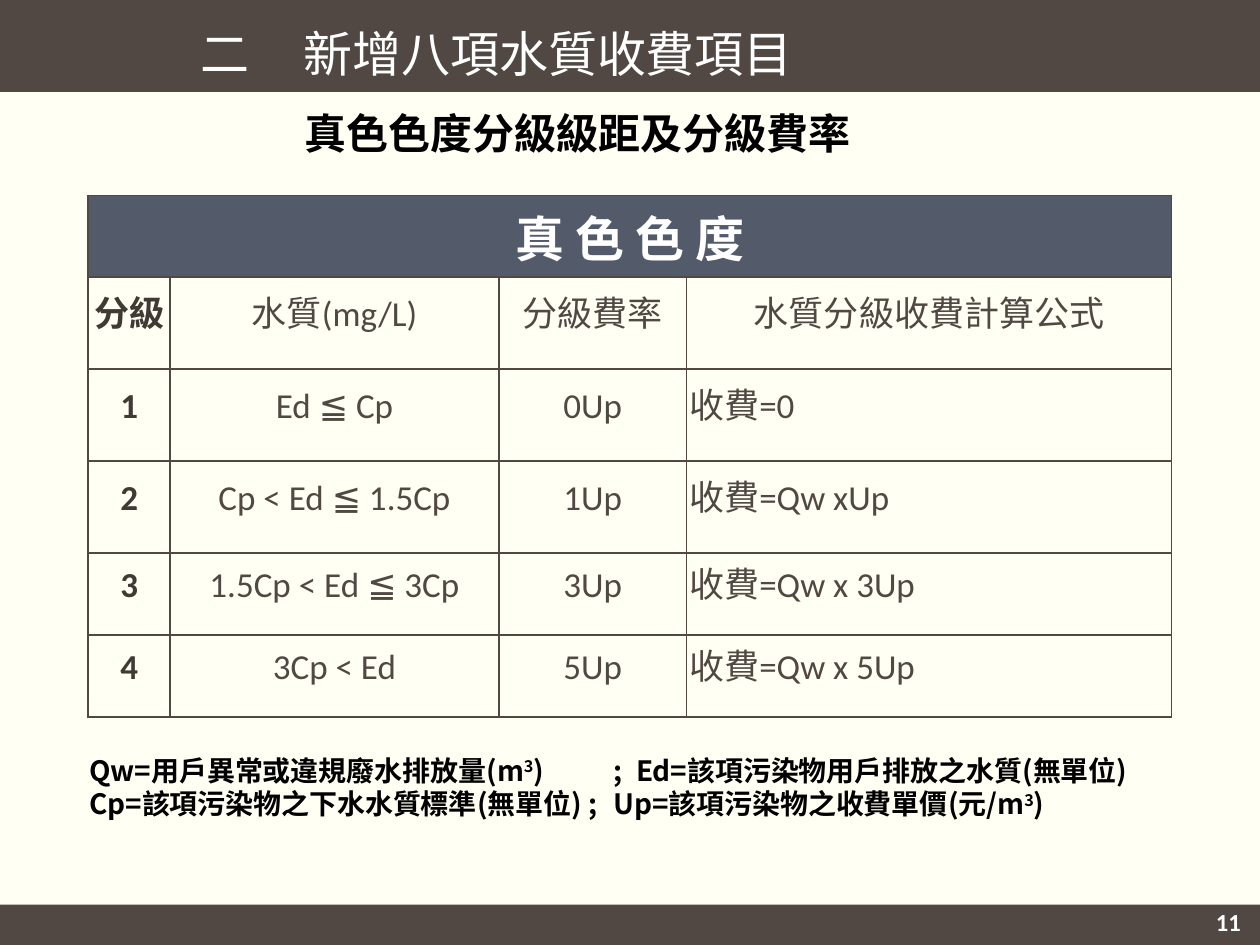
from dataclasses import dataclass

from lxml import etree
from pptx import Presentation
from pptx.dml.color import RGBColor
from pptx.enum.shapes import MSO_SHAPE
from pptx.enum.text import MSO_ANCHOR, MSO_AUTO_SIZE, PP_ALIGN
from pptx.oxml.ns import qn
from pptx.util import Pt

PX = 9144  # 100 px to the inch
RECTANGLE = MSO_SHAPE.RECTANGLE
MIDDLE = MSO_ANCHOR.MIDDLE
GROW = MSO_AUTO_SIZE.SHAPE_TO_FIT_TEXT
LEFT, CENTER = PP_ALIGN.LEFT, PP_ALIGN.CENTER

IVORY = RGBColor(0xFF, 0xFF, 0xF3)
BROWN = RGBColor(0x51, 0x48, 0x43)
DARK_BROWN = RGBColor(0x41, 0x39, 0x33)
SLATE = RGBColor(0x53, 0x5A, 0x69)
WHITE = RGBColor(0xFF, 0xFF, 0xFF)
BLACK = RGBColor(0, 0, 0)
JP, SC, CALIBRI = "Noto Sans CJK JP", "Noto Sans CJK SC", "Calibri"


@dataclass(frozen=True)
class TextStyle:
    size: int
    color: RGBColor
    latin: str
    east_asian: str
    bold: bool = False


@dataclass(frozen=True)
class Label:
    box: tuple[int, int, int, int]
    lines: tuple[str, ...]
    style: TextStyle
    tabs: tuple[int, ...] = ()
    align: PP_ALIGN = LEFT
    wrap: bool = True


TABLE_TITLE = TextStyle(28, WHITE, CALIBRI, SC, True)
GRADE = TextStyle(20, DARK_BROWN, CALIBRI, SC, True)
BODY = TextStyle(20, BROWN, CALIBRI, SC)

BARS = ((0, 0, 1000, 73), (0, 718, 1000, 32))
# A caret starts and ends a superscript.
LABELS = (
    Label((61, 593, 885, 64),
          ("Qw=用戶異常或違規廢水排放量(m^3^)\t;\tEd=該項污染物用戶排放之水質(無單位)",
           "Cp=該項污染物之下水水質標準(無單位) ;\tUp=該項污染物之收費單價(元/m^3^)"),
          TextStyle(16, BLACK, JP, JP, True), tabs=(416, 434)),
    Label((232, 80, 537, 51), ("真色色度分級級距及分級費率",),
          TextStyle(24, BLACK, JP, JP, True)),
    Label((955, 715, 40, 34), ("11",),
          TextStyle(14, WHITE, CALIBRI, SC, True), align=CENTER, wrap=False),
    Label((149, 14, 708, 57), ("二\t新增八項水質收費項目",),
          TextStyle(28, WHITE, SC, SC), tabs=(82,)),
)

TABLE_LEFT, TABLE_TOP = 70, 155
COLUMN_WIDTHS = (65, 261, 149, 385)
ROW_HEIGHTS = (65, 73, 73, 73, 65, 65)
RATE_TITLE = "真 色 色 度"
RATE_ROWS = (
    ("分級", "水質(mg/L)", "分級費率", "水質分級收費計算公式"),
    ("1", "Ed ≦ Cp", "0Up", "收費=0"),
    ("2", "Cp < Ed ≦ 1.5Cp", "1Up", "收費=Qw xUp"),
    ("3", "1.5Cp < Ed ≦ 3Cp", "3Up", "收費=Qw x 3Up"),
    ("4", "3Cp < Ed", "5Up", "收費=Qw x 5Up"),
)


def scaled(lengths) -> list[int]:
    return [length * PX for length in lengths]


def add_run(paragraph, text: str, style: TextStyle, superscript: bool = False) -> None:
    run = paragraph.add_run()
    run.text = text
    run.font.size = Pt(style.size)
    run.font.bold = style.bold
    run.font.color.rgb = style.color
    run.font.name = style.latin
    properties = run._r.get_or_add_rPr()
    etree.SubElement(properties, qn("a:ea"), typeface=style.east_asian)
    if superscript:
        properties.set("baseline", "30000")


def add_tabs(paragraph, stops: tuple[int, ...]) -> None:
    tab_list = etree.SubElement(paragraph._p.get_or_add_pPr(), qn("a:tabLst"))
    for stop in stops:
        etree.SubElement(tab_list, qn("a:tab"), pos=str(stop * PX), algn="l")


def add_bar(slide, box: tuple[int, int, int, int]) -> None:
    bar = slide.shapes.add_shape(RECTANGLE, *scaled(box))
    bar.shadow.inherit = False
    bar.fill.solid()
    bar.fill.fore_color.rgb = BROWN
    bar.line.fill.background()


def add_label(slide, label: Label) -> None:
    frame = slide.shapes.add_textbox(*scaled(label.box)).text_frame
    frame.word_wrap = label.wrap
    frame.auto_size = GROW
    for index, line in enumerate(label.lines):
        paragraph = frame.add_paragraph() if index else frame.paragraphs[0]
        if label.tabs:
            add_tabs(paragraph, label.tabs)
        paragraph.alignment = label.align
        for part, text in enumerate(line.split("^")):
            add_run(paragraph, text, label.style, superscript=part % 2 == 1)


def add_borders(cell) -> None:
    properties = cell._tc.get_or_add_tcPr()
    for index, side in enumerate(("a:lnL", "a:lnR", "a:lnT", "a:lnB")):
        border = etree.Element(qn(side), w=str(Pt(1)))
        fill = etree.SubElement(border, qn("a:solidFill"))
        etree.SubElement(fill, qn("a:srgbClr"), val=str(BROWN))
        properties.insert(index, border)


def format_cell(cell) -> None:
    cell.margin_left = cell.margin_right = 2 * PX
    cell.margin_top = cell.margin_bottom = 0
    cell.vertical_anchor = MIDDLE
    cell.fill.background()
    add_borders(cell)


def fill_cell(cell, text: str, style: TextStyle, align: PP_ALIGN = CENTER) -> None:
    paragraph = cell.text_frame.paragraphs[0]
    paragraph.alignment = align
    add_run(paragraph, text, style)


def add_rate_table(slide) -> None:
    table = slide.shapes.add_table(
        len(ROW_HEIGHTS), len(COLUMN_WIDTHS),
        *scaled((TABLE_LEFT, TABLE_TOP, sum(COLUMN_WIDTHS), sum(ROW_HEIGHTS)))).table
    table.first_row = table.horz_banding = False
    for column, width in zip(table.columns, scaled(COLUMN_WIDTHS)):
        column.width = width
    for row, height in zip(table.rows, scaled(ROW_HEIGHTS)):
        row.height = height
    for cell in table.iter_cells():
        format_cell(cell)

    last_column = len(COLUMN_WIDTHS) - 1
    heading = table.cell(0, 0)
    heading.merge(table.cell(0, last_column))
    heading.fill.solid()
    heading.fill.fore_color.rgb = SLATE
    fill_cell(heading, RATE_TITLE, TABLE_TITLE)
    for row, texts in enumerate(RATE_ROWS, start=1):
        for column, text in enumerate(texts):
            is_formula = row > 1 and column == last_column
            cell = table.cell(row, column)
            fill_cell(cell, text, BODY if column else GRADE,
                      LEFT if is_formula else CENTER)
            cell.text_frame.paragraphs[0].line_spacing = Pt(15)


def main() -> None:
    presentation = Presentation()
    presentation.slide_width, presentation.slide_height = scaled((1000, 750))
    slide = presentation.slides.add_slide(presentation.slide_layouts[6])
    slide.background.fill.solid()
    slide.background.fill.fore_color.rgb = IVORY
    for bar in BARS:
        add_bar(slide, bar)
    add_rate_table(slide)
    for label in LABELS:
        add_label(slide, label)
    presentation.save("out.pptx")


if __name__ == "__main__":
    main()
